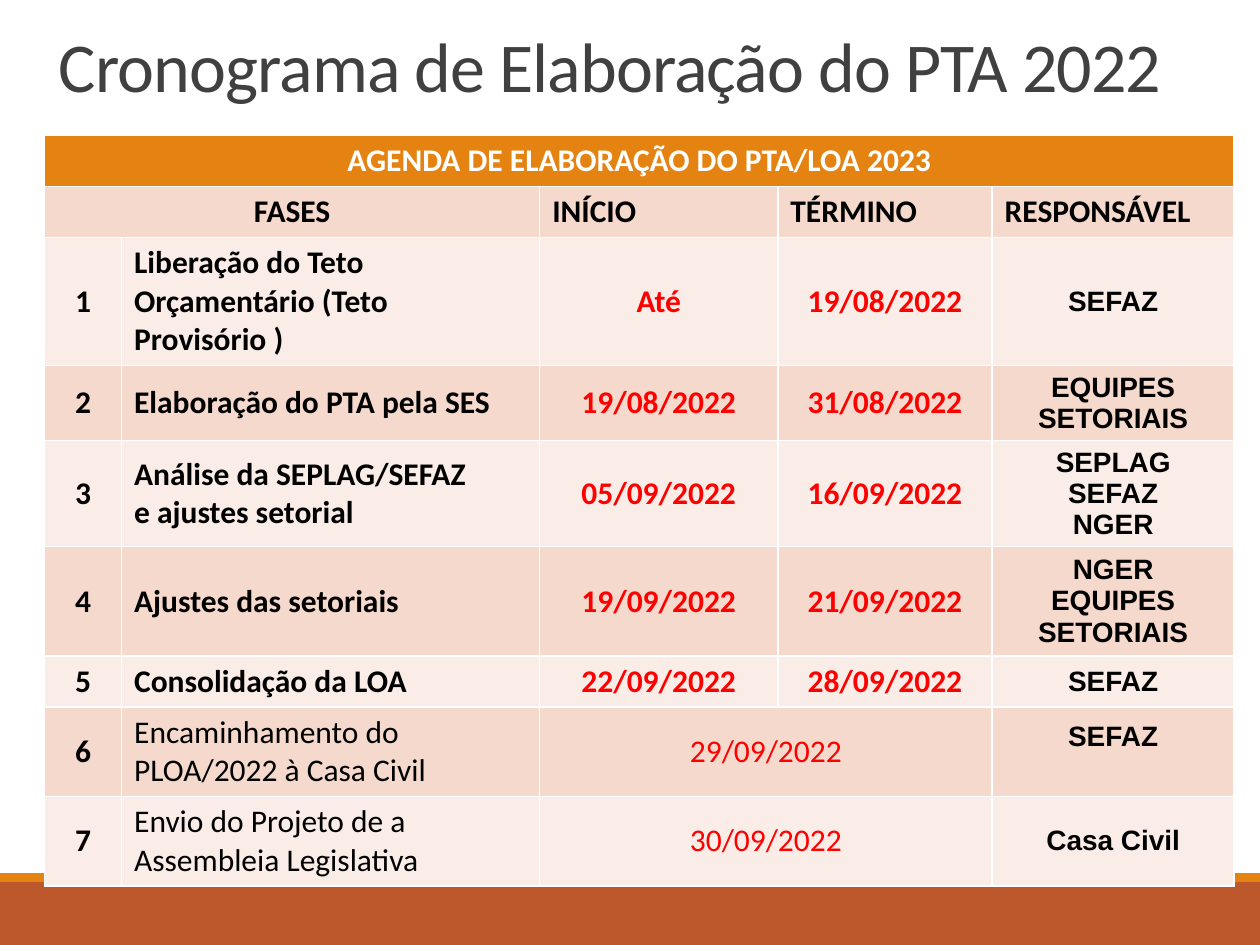
from pptx import Presentation
from pptx.dml.color import RGBColor
from pptx.enum.shapes import MSO_SHAPE
from pptx.enum.text import MSO_ANCHOR, PP_ALIGN
from pptx.util import Cm, Pt

ORANGE, RUST = "E48312", "BD582C"
BANDS = ["F5D9CC", "FAEDE7"]
BLACK, WHITE, RED, GRAY = "000000", "FFFFFF", "FF0000", "404040"

COLUMN_WIDTHS = [1.55, 8.43, 4.8, 4.32, 4.88]
ROW_HEIGHTS = [1.03, 1.03, 2.58, 1.51, 2.14, 2.2, 1.03, 1.8, 1.8]
HEADINGS = ["FASES", None, "INÍCIO", "TÉRMINO", "RESPONSÁVEL"]
# Phase, start, end (None when both dates share one cell), responsible
PHASES = [
    ("Liberação do Teto Orçamentário (Teto Provisório )", "Até", "19/08/2022", "SEFAZ"),
    ("Elaboração do PTA pela SES", "19/08/2022", "31/08/2022", "EQUIPES SETORIAIS"),
    ("Análise da SEPLAG/SEFAZ\ne ajustes setorial", "05/09/2022", "16/09/2022",
     "SEPLAG\nSEFAZ\nNGER"),
    ("Ajustes das setoriais", "19/09/2022", "21/09/2022", "NGER\nEQUIPES SETORIAIS"),
    ("Consolidação da LOA", "22/09/2022", "28/09/2022", "SEFAZ"),
    ("Encaminhamento do PLOA/2022 à Casa Civil", "29/09/2022", None, "SEFAZ"),
    ("Envio do Projeto de a Assembleia Legislativa", "30/09/2022", None, "Casa Civil"),
]


def rgb(color):
    return RGBColor.from_string(color)


def write(cell, text, color=BLACK, align=PP_ALIGN.CENTER, bold=True, size=18, name="Calibri"):
    cell.text = text
    for paragraph in cell.text_frame.paragraphs:
        paragraph.alignment = align
        paragraph.font.size = Pt(size)
        paragraph.font.name = name
        paragraph.font.bold = bold
        paragraph.font.color.rgb = rgb(color)


presentation = Presentation()
presentation.slide_width, presentation.slide_height = Cm(25.4), Cm(19.05)
slide = presentation.slides.add_slide(presentation.slide_layouts[5])

# Footer bands
for top, height, color in [(17.78, 1.27, RUST), (17.6, 0.18, ORANGE)]:
    band = slide.shapes.add_shape(MSO_SHAPE.RECTANGLE, 0, Cm(top), Cm(25.4), Cm(height))
    band.shadow.inherit = False
    band.fill.solid()
    band.fill.fore_color.rgb = rgb(color)
    band.line.fill.background()

# Title
title = slide.shapes.title
title.left, title.top, title.width, title.height = Cm(0.5), Cm(0.74), Cm(23.6), Cm(1.55)
title.text_frame.text = "Cronograma de Elaboração do PTA 2022"
title.text_frame.vertical_anchor = MSO_ANCHOR.BOTTOM
paragraph = title.text_frame.paragraphs[0]
paragraph.alignment = PP_ALIGN.CENTER
paragraph.line_spacing = 0.85
run = paragraph.runs[0]
run.font.size = Pt(40)
run.font.name = "Calibri"
run.font.color.rgb = rgb(GRAY)
run.font._element.set("spc", "-50")

# Schedule table
table = slide.shapes.add_table(
    len(ROW_HEIGHTS), len(COLUMN_WIDTHS), Cm(0.9), Cm(2.73),
    Cm(sum(COLUMN_WIDTHS)), Cm(sum(ROW_HEIGHTS))).table
for column, width in zip(table.columns, COLUMN_WIDTHS):
    column.width = Cm(width)
for index, (row, height) in enumerate(zip(table.rows, ROW_HEIGHTS)):
    row.height = Cm(height)
    for cell in row.cells:
        cell.fill.solid()
        cell.fill.fore_color.rgb = rgb(BANDS[(index - 1) % 2] if index else ORANGE)
        cell.vertical_anchor = MSO_ANCHOR.MIDDLE if index > 1 else MSO_ANCHOR.TOP

table.cell(0, 0).merge(table.cell(0, 4))
write(table.cell(0, 0), "AGENDA DE ELABORAÇÃO DO PTA/LOA 2023", WHITE)

table.cell(1, 0).merge(table.cell(1, 1))
for column, heading in enumerate(HEADINGS):
    if heading:
        write(table.cell(1, column), heading,
              align=PP_ALIGN.LEFT if column else PP_ALIGN.CENTER)

for number, (phase, start, end, responsible) in enumerate(PHASES, 1):
    number_cell, phase_cell, start_cell, end_cell, responsible_cell = table.rows[number + 1].cells
    has_end = end is not None
    write(number_cell, str(number))
    write(phase_cell, phase, align=PP_ALIGN.LEFT, bold=has_end)
    write(start_cell, start, RED, bold=has_end)
    if has_end:
        write(end_cell, end, RED)
    else:
        start_cell.merge(end_cell)
    write(responsible_cell, responsible, size=16, name="Arial")

# The responsible for phase 6 sits above the middle of its row
raised_cell = table.cell(7, 4)
raised_cell.vertical_anchor = MSO_ANCHOR.TOP
raised_cell.margin_top = Cm(0.3)

presentation.save("out.pptx")
